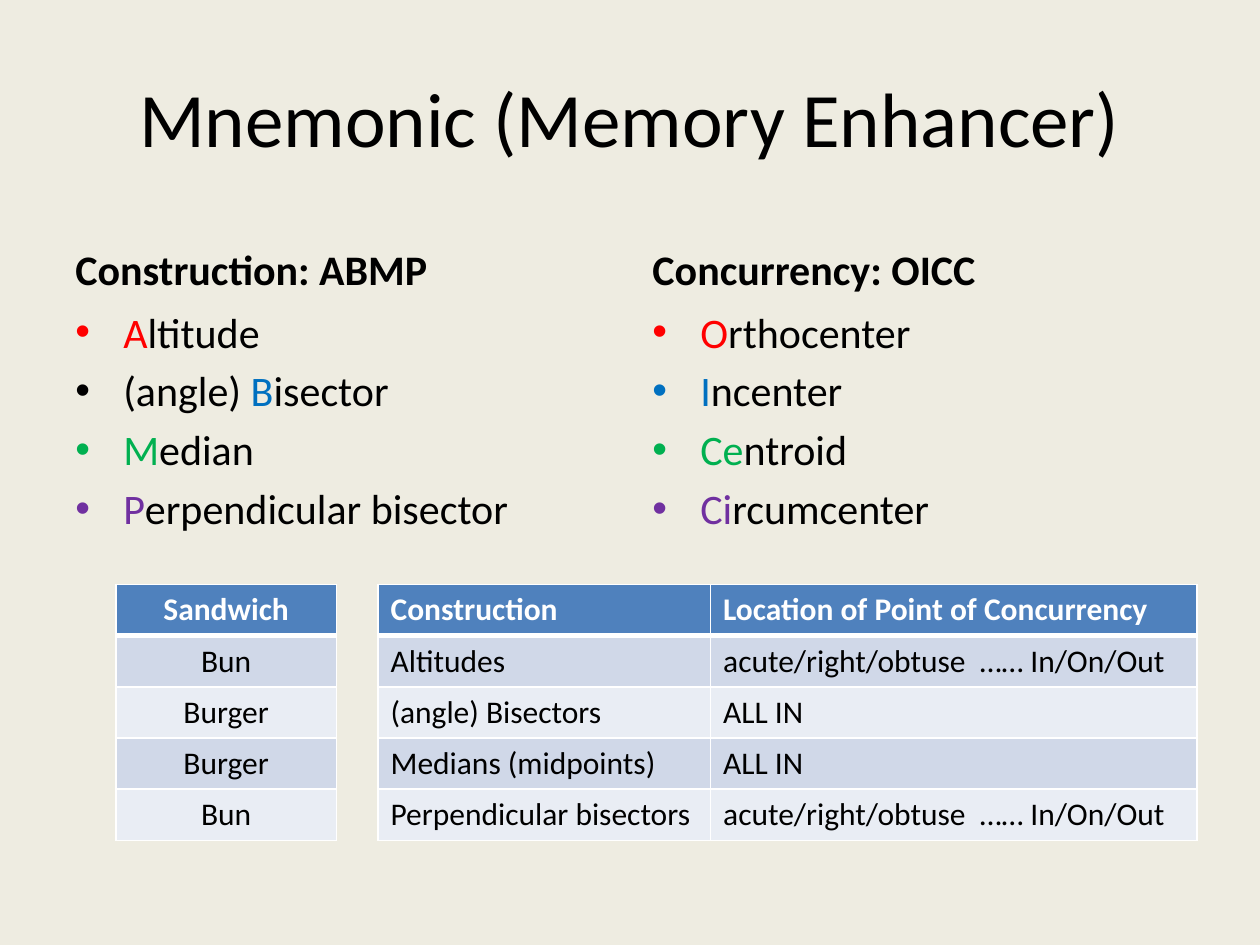
from lxml.etree import SubElement
from pptx import Presentation
from pptx.dml.color import RGBColor
from pptx.enum.text import MSO_ANCHOR as Anchor, PP_ALIGN as Align
from pptx.oxml.ns import qn
from pptx.util import Inches, Pt

FONT = "Calibri"
COLORS = {
    "background": "EEECE1",
    "text": "000000",
    "red": "FF0000",
    "blue": "0070C0",
    "green": "00B050",
    "purple": "7030A0",
    "white": "FFFFFF",
    "header": "4F81BD",
    "odd_row": "D0D8E8",
    "even_row": "E9EDF4",
}
COLUMNS = [
    (0.5, "Construction: ABMP", [
        [("A", "red"), ("ltitude", "text")],
        [("(angle) ", "text"), ("B", "blue"), ("isector", "text")],
        [("M", "green"), ("edian", "text")],
        [("P", "purple"), ("erpendicular bisector", "text")],
    ]),
    (5.08, "Concurrency: OICC", [
        [("O", "red"), ("rthocenter", "text")],
        [("I", "blue"), ("ncenter", "text")],
        [("Ce", "green"), ("ntroid", "text")],
        [("Ci", "purple"), ("rcumcenter", "text")],
    ]),
]
BY_TRIANGLE = "acute/right/obtuse  …… In/On/Out"
LOCATIONS = [
    ["Construction", "Location of Point of Concurrency"],
    ["Altitudes", BY_TRIANGLE],
    ["(angle) Bisectors", "ALL IN"],
    ["Medians (midpoints)", "ALL IN"],
    ["Perpendicular bisectors", BY_TRIANGLE],
]
SANDWICH = [["Sandwich"], ["Bun"], ["Burger"], ["Burger"], ["Bun"]]
TABLE_TOP = 4.64
ROW_HEIGHT = 0.406


def color(name):
    return RGBColor.from_string(COLORS[name])


def style_span(span, size, name="text", bold=False):
    span.font.name = FONT
    span.font.size = Pt(size)
    span.font.bold = bold
    span.font.color.rgb = color(name)


def add_box(page, left, top, width, height, anchor):
    box = page.shapes.add_textbox(Inches(left), Inches(top), Inches(width), Inches(height))
    box.text_frame.word_wrap = True
    box.text_frame.vertical_anchor = anchor
    return box.text_frame


def add_heading(page, text, place, anchor, size, bold=False, align=Align.LEFT):
    frame = add_box(page, *place, anchor)
    frame.text = text
    para = frame.paragraphs[0]
    para.alignment = align
    style_span(para.runs[0], size, bold=bold)


def add_bullet(para):
    properties = para._p.get_or_add_pPr()
    properties.set("marL", str(Inches(0.38)))
    properties.set("indent", str(-Inches(0.38)))
    SubElement(properties, qn("a:buFont"), typeface="Arial")
    SubElement(properties, qn("a:buChar"), char="•")


def add_bullets(page, items, place):
    frame = add_box(page, *place, Anchor.TOP)
    for index, pieces in enumerate(items):
        para = frame.add_paragraph() if index else frame.paragraphs[0]
        para.space_before = Pt(4.8)
        add_bullet(para)
        for text, name in pieces:
            span = para.add_run()
            span.text = text
            style_span(span, 24, name)


def add_borders(cell, row):
    widths = {"L": 1, "R": 1, "T": 3 if row == 1 else 1, "B": 3 if row == 0 else 1}
    properties = cell._tc.get_or_add_tcPr()
    for side, width in widths.items():
        line = SubElement(properties, qn(f"a:ln{side}"), w=str(Pt(width)))
        fill = SubElement(line, qn("a:solidFill"))
        SubElement(fill, qn("a:srgbClr"), val=COLORS["white"])


def add_grid(page, rows, left, widths, align):
    table = page.shapes.add_table(
        len(rows), len(widths), Inches(left), Inches(TABLE_TOP),
        Inches(sum(widths)), Inches(ROW_HEIGHT * len(rows))).table
    table.horz_banding = False
    for column, width in zip(table.columns, widths):
        column.width = Inches(width)
    for row, texts in enumerate(rows):
        header = row == 0
        band = "odd_row" if row % 2 else "even_row"
        for column, text in enumerate(texts):
            cell = table.cell(row, column)
            add_borders(cell, row)
            cell.fill.solid()
            cell.fill.fore_color.rgb = color("header" if header else band)
            cell.text_frame.text = text
            para = cell.text_frame.paragraphs[0]
            para.alignment = align
            style_span(para.runs[0], 18, "white" if header else "text", header)


def main():
    deck = Presentation()
    deck.slide_width, deck.slide_height = Inches(10), Inches(7.5)
    page = deck.slides.add_slide(deck.slide_layouts[6])
    page.background.fill.solid()
    page.background.fill.fore_color.rgb = color("background")
    add_heading(page, "Mnemonic (Memory Enhancer)", (0.5, 0.3, 9, 1.25),
                Anchor.MIDDLE, 44, align=Align.CENTER)
    for left, heading, items in COLUMNS:
        add_heading(page, heading, (left, 1.68, 4.42, 0.7), Anchor.BOTTOM, 24, bold=True)
        add_bullets(page, items, (left, 2.38, 4.42, 2.1))
    add_grid(page, LOCATIONS, 3, [2.64, 3.86], Align.LEFT)
    add_grid(page, SANDWICH, 0.92, [1.75], Align.CENTER)
    deck.save("out.pptx")


if __name__ == "__main__":
    main()
